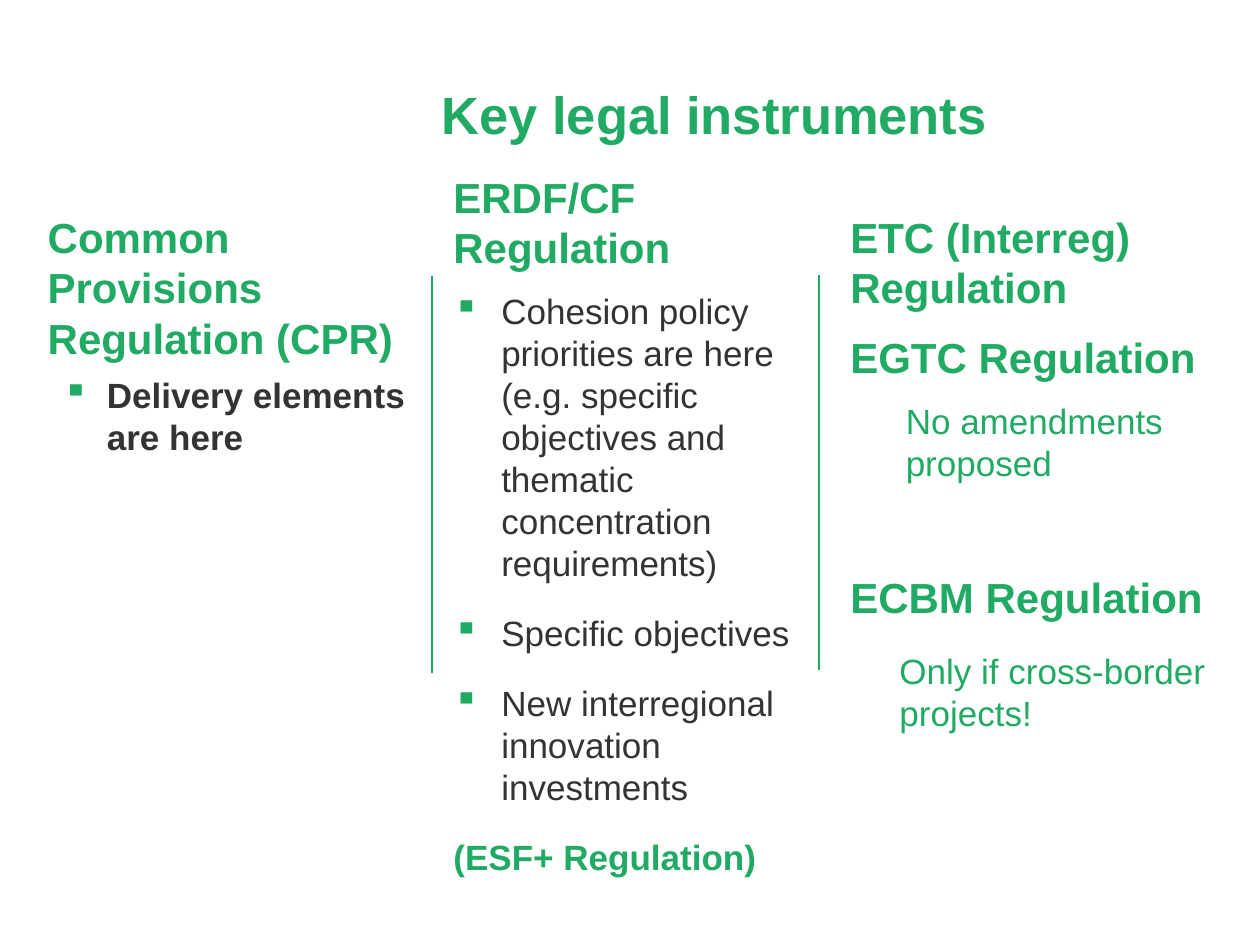
import pptx
import pptx.dml.color
import pptx.enum.shapes
import pptx.enum.text
import pptx.oxml.ns
import pptx.oxml.xmlchemy
import pptx.util

Inches = pptx.util.Inches
Pt = pptx.util.Pt
qn = pptx.oxml.ns.qn
OxmlElement = pptx.oxml.xmlchemy.OxmlElement

GREEN = pptx.dml.color.RGBColor(0x20, 0xAA, 0x63)
RULE_GREEN = pptx.dml.color.RGBColor(0x1C, 0xAA, 0x61)
DARK = pptx.dml.color.RGBColor(0x33, 0x33, 0x33)


def add_bullet(p, color, char="▪"):
    """Give a paragraph a coloured bullet character."""
    pPr = p._p.get_or_add_pPr()
    clr = OxmlElement("a:buClr")
    rgb = OxmlElement("a:srgbClr")
    rgb.set("val", str(color))
    clr.append(rgb)
    bu = OxmlElement("a:buChar")
    bu.set("char", char)
    pPr.extend([clr, bu])


def write(tf, text, size=20, color=GREEN, bold=False, before=4, after=12,
          left=0, hang=0, align=pptx.enum.text.PP_ALIGN.LEFT):
    """Add a formatted paragraph, bulleted when it has a hanging indent."""
    first = not tf.text
    p = tf.paragraphs[0] if first else tf.add_paragraph()
    p.alignment = align
    p.space_before = Pt(0 if first else before)
    p.space_after = Pt(after)
    pPr = p._p.get_or_add_pPr()
    pPr.set("marL", str(Inches(left)))
    pPr.set("indent", str(Inches(-hang)))
    if hang:
        add_bullet(p, GREEN)
    r = p.add_run()
    r.text = text
    r.font.name = "Arial"
    r.font.size = Pt(size)
    r.font.bold = bold
    r.font.color.rgb = color


class SlideBuilder:
    """Hold the slide and its style, and add elements to it."""

    heading = dict(size=24, bold=True, before=5, after=6)
    bullet = dict(color=DARK, left=0.38, hang=0.38)

    def __init__(self, prs):
        self.s = prs.slides.add_slide(prs.slide_layouts[6])

    def text(self, left, top, width, height, paragraphs):
        """Add a wrapped text box from (text, format) pairs."""
        sp = self.s.shapes.add_textbox(
            Inches(left), Inches(top), Inches(width), Inches(height))
        tf = sp.text_frame
        tf.word_wrap = True
        for text, fmt in paragraphs:
            write(tf, text, **fmt)

    def divider(self, x, top, bottom):
        """Add a thin vertical rule."""
        line = self.s.shapes.add_connector(
            pptx.enum.shapes.MSO_CONNECTOR.STRAIGHT,
            Inches(x), Inches(top), Inches(x), Inches(bottom))
        line.line.color.rgb = RULE_GREEN
        line.line.width = Pt(1)
        line._element.find(qn("p:spPr")).append(OxmlElement("a:effectLst"))


def main():
    """Build the slide and save it."""
    prs = pptx.Presentation()
    prs.slide_width, prs.slide_height = Inches(10), Inches(7.5)
    b = SlideBuilder(prs)
    heading, bullet = b.heading, b.bullet

    b.text(1.84, 0.6, 7.66, 0.79, [
        ("Key legal instruments",
         dict(size=30, bold=True, after=0,
              align=pptx.enum.text.PP_ALIGN.CENTER)),
    ])
    b.text(0.28, 1.63, 3.15, 5.35, [
        ("Common Provisions Regulation (CPR)", heading),
        ("Delivery elements are here",
         dict(color=DARK, bold=True, before=0, left=0.47, hang=0.35)),
    ])
    b.text(3.5, 1.31, 2.95, 5.2, [
        ("ERDF/CF Regulation", heading),
        ("Cohesion policy priorities are here (e.g. specific objectives "
         "and thematic concentration requirements)", bullet),
        ("Specific objectives", bullet),
        ("New interregional innovation investments", bullet),
        ("(ESF+ Regulation)", dict(bold=True)),
    ])
    b.text(6.65, 1.63, 3.15, 5.12, [
        ("ETC (Interreg) Regulation", heading),
        ("EGTC Regulation", heading),
        ("No amendments proposed", dict(left=0.44, after=6)),
        ("ECBM Regulation", {**heading, "before": 44, "after": 12}),
        ("Only if cross-border projects!", dict(left=0.39)),
    ])
    b.divider(6.5, 2.18, 5.32)
    b.divider(3.43, 2.19, 5.34)
    prs.save("out.pptx")


if __name__ == "__main__":
    main()
